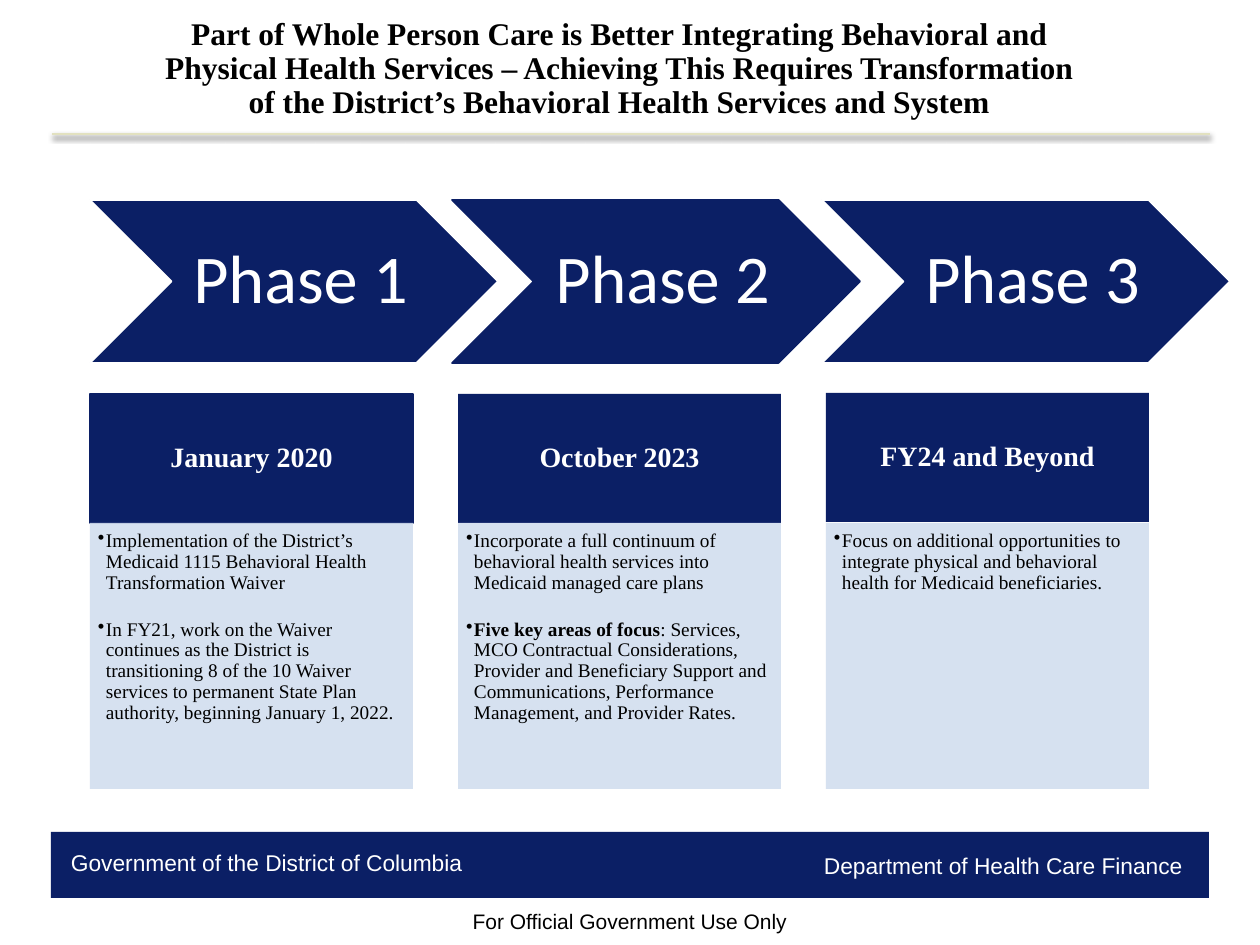
from dataclasses import dataclass

from lxml.etree import SubElement
from pptx import Presentation
from pptx.dml.color import RGBColor
from pptx.enum.shapes import MSO_CONNECTOR as Connector, MSO_SHAPE as Preset
from pptx.enum.text import MSO_ANCHOR as Anchor, PP_ALIGN as Align
from pptx.oxml.ns import qn
from pptx.util import Pt

EMU_PER_PX = 914400 / 126
NAVY, PALE, WHITE, BLACK, SAND = "0B1F65", "D2DEEF", "FFFFFF", "000000", "E2E1C0"
SERIF, SANS, ROUND = "Times New Roman", "Arial", "Calibri"


@dataclass
class Box:
    left: int
    top: int
    width: int
    height: int


@dataclass
class TextStyle:
    size: int
    name: str
    color: str
    bold: bool = False
    align: Align = Align.LEFT
    anchor: Anchor = Anchor.TOP
    spacing: float = 1.0
    margins: tuple = (13, 6, 13, 6)
    wrap: bool = True
    bullet: bool = False
    gap: int = 0


@dataclass
class Phase:
    label: str
    chevron_left: int
    chevron_line: str
    card_left: int
    header_top: int
    header_line: str | None
    date: str
    points: list  # each point is a list of (text, bold) runs


TITLE = TextStyle(18, SERIF, BLACK, True, Align.CENTER, Anchor.MIDDLE, 0.9)
NOTICE = TextStyle(12, SANS, BLACK, align=Align.CENTER)
FOOTER = TextStyle(13, SANS, WHITE)
CHEVRON = TextStyle(39, ROUND, WHITE, False, Align.CENTER, Anchor.MIDDLE, 0.9, (21, 8, 8, 8), False)
HEADER = TextStyle(16, SERIF, WHITE, True, Align.CENTER, Anchor.MIDDLE, 0.9, (15, 9, 15, 9))
BODY = TextStyle(11, SERIF, BLACK, spacing=0.9, margins=(8, 8, 11, 13), bullet=True, gap=15)

PHASES = [
    Phase("Phase 1", 90, WHITE, 90, 394, NAVY, "January 2020", [
        [("Implementation of the District’s Medicaid 1115 Behavioral Health "
          "Transformation Waiver", False)],
        [("In FY21, work on the Waiver continues as the District is transitioning 8 of the 10 "
          "Waiver services to permanent State Plan authority, beginning January 1, 2022.", False)],
    ]),
    Phase("Phase 2", 452, NAVY, 458, 394, None, "October 2023", [
        [("Incorporate a full continuum of behavioral health services into "
          "Medicaid managed care plans", False)],
        [("Five key areas of focus", True),
         (": Services, MCO Contractual Considerations, Provider and Beneficiary Support and "
          "Communications, Performance Management, and Provider Rates.", False)],
    ]),
    Phase("Phase 3", 822, WHITE, 826, 393, None, "FY24 and Beyond", [
        [("Focus on additional opportunities to integrate physical and behavioral health "
          "for Medicaid beneficiaries.", False)],
    ]),
]


def px(value: int) -> int:
    return round(value * EMU_PER_PX)


def rgb(color: str) -> RGBColor:
    return RGBColor.from_string(color)


def set_values(target, values: dict) -> None:
    for name, value in values.items():
        setattr(target, name, value)


def place(box: Box) -> tuple:
    return px(box.left), px(box.top), px(box.width), px(box.height)


def write(shape, paragraphs: list, style: TextStyle) -> None:
    frame = shape.text_frame
    sides = ("margin_left", "margin_top", "margin_right", "margin_bottom")
    set_values(frame, {"word_wrap": style.wrap, "vertical_anchor": style.anchor,
                       **dict(zip(sides, map(px, style.margins)))})
    for index, runs in enumerate(paragraphs):
        paragraph = frame.add_paragraph() if index else frame.paragraphs[0]
        set_values(paragraph, {"alignment": style.align, "line_spacing": style.spacing,
                               "space_before": Pt(style.gap if index else 0)})
        if style.bullet:
            properties = paragraph._p.get_or_add_pPr()
            properties.set("marL", str(px(8)))
            properties.set("indent", str(-px(8)))
            SubElement(properties, qn("a:buChar"), char="•")
        for text, bold in runs:
            run = paragraph.add_run()
            run.text = text
            set_values(run.font, {"size": Pt(style.size), "name": style.name, "bold": bold})
            run.font.color.rgb = rgb(style.color)


def add_label(slide, box: Box, text: str, style: TextStyle) -> None:
    write(slide.shapes.add_textbox(*place(box)), [[(text, style.bold)]], style)


def add_panel(slide, preset: Preset, box: Box, fill: str, line: str | None = None,
              line_width: float = 1):
    shape = slide.shapes.add_shape(preset, *place(box))
    shape.shadow.inherit = False
    shape.fill.solid()
    shape.fill.fore_color.rgb = rgb(fill)
    if line:
        shape.line.color.rgb = rgb(line)
        shape.line.width = Pt(line_width)
    else:
        shape.line.fill.background()
    return shape


def add_title_rule(slide) -> None:
    rule = slide.shapes.add_connector(Connector.STRAIGHT, px(52), px(134), px(1210), px(134))
    rule.line.color.rgb = rgb(SAND)
    rule.line.width = Pt(1.5)
    effects = SubElement(rule._element.spPr, qn("a:effectLst"))
    shadow = SubElement(effects, qn("a:outerShdw"), blurRad=str(Pt(3.1)), dist=str(Pt(1.6)),
                        dir="5400000", rotWithShape="0")
    color = SubElement(shadow, qn("a:srgbClr"), val=BLACK)
    SubElement(color, qn("a:alpha"), val="38000")


def add_phase(slide, phase: Phase) -> None:
    # Date header
    header = add_panel(slide, Preset.RECTANGLE, Box(phase.card_left, phase.header_top, 323, 129),
                       NAVY, phase.header_line, 0.75)
    write(header, [[(phase.date, HEADER.bold)]], HEADER)
    # Translucent body with the bullet points
    body = add_panel(slide, Preset.RECTANGLE, Box(phase.card_left, 523, 323, 266), PALE)
    color = body._element.spPr.find(qn("a:solidFill")).find(qn("a:srgbClr"))
    SubElement(color, qn("a:alpha"), val="90000")
    write(body, phase.points, BODY)
    # Chevron
    chevron = add_panel(slide, Preset.CHEVRON, Box(phase.chevron_left, 200, 408, 163),
                        NAVY, phase.chevron_line)
    write(chevron, [[(phase.label, CHEVRON.bold)]], CHEVRON)


def main() -> None:
    presentation = Presentation()
    set_values(presentation, {"slide_width": px(1260), "slide_height": px(945)})
    slide = presentation.slides.add_slide(presentation.slide_layouts[6])

    # Footer
    add_label(slide, Box(0, 903, 1260, 38), "For Official Government Use Only", NOTICE)
    add_panel(slide, Preset.RECTANGLE, Box(51, 832, 1158, 66), NAVY)
    add_label(slide, Box(58, 843, 449, 40), "Government of the District of Columbia", FOOTER)
    add_label(slide, Box(811, 846, 392, 40), "Department of Health Care Finance", FOOTER)

    # Title
    add_title_rule(slide)
    add_label(slide, Box(152, -6, 935, 150),
              "Part of Whole Person Care is Better Integrating Behavioral and Physical Health "
              "Services – Achieving This Requires Transformation of the District’s Behavioral "
              "Health Services and System", TITLE)

    # Phases
    for phase in PHASES:
        add_phase(slide, phase)

    presentation.save("out.pptx")


if __name__ == "__main__":
    main()
